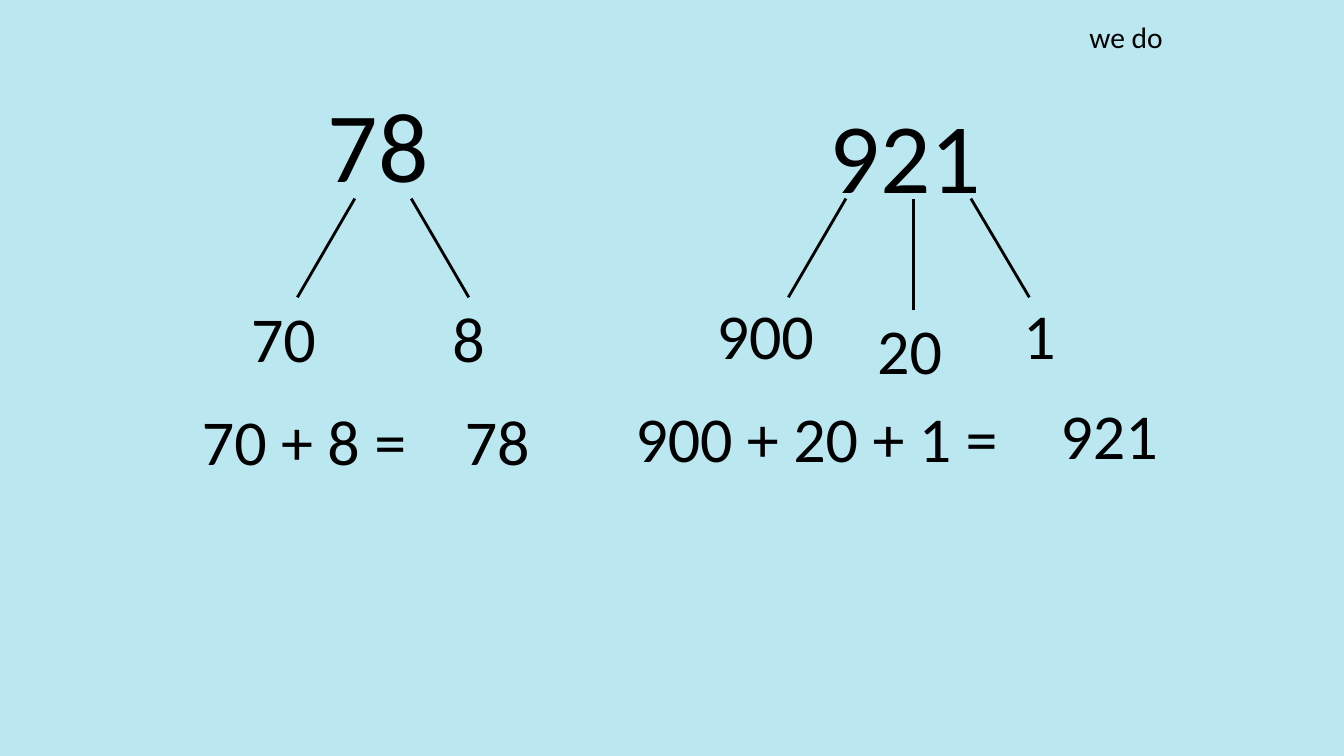
"""Build a slide that partitions 78 and 921 into place values."""
from dataclasses import dataclass

from lxml.etree import SubElement
from pptx import Presentation
from pptx.dml.color import RGBColor
from pptx.enum.shapes import MSO_CONNECTOR
from pptx.enum.text import MSO_ANCHOR, MSO_AUTO_SIZE, PP_ALIGN
from pptx.oxml.ns import qn
from pptx.util import Inches, Pt


@dataclass(frozen=True)
class Theme:
    """Colours, font and type sizes."""
    background: RGBColor = RGBColor(0xBA, 0xE7, 0xF0)
    ink: RGBColor = RGBColor(0, 0, 0)
    font: str = "Calibri"
    number: float = 71
    addend: float = 45.7
    label: float = 21.1
    line: float = 2
    inset: float = 0.04


THEME = Theme()
WIDTH, HEIGHT = 13.33, 7.5
EMS = {" ": 0.23, "w": 0.72, "e": 0.5, "d": 0.53, "o": 0.53, "+": 0.5, "=": 0.5}
DIGIT_EM, LINE_EM = 0.51, 1.22

LABEL = ("we do", 83.82, 4.87)
BRANCH_TOP = 26.27
MODELS = [
    {"number": ("78", 28.16, 18.87),
     "addends": [("70", 21.11, 44.6), ("8", 34.88, 44.6)],
     "branches": [(26.4, 22.13, 39.33), (30.6, 34.88, 39.33)],
     "sum": [("70 + 8 =", 22.69, 58.2), ("78", 37.02, 58.2)]},
    {"number": ("921", 67.4, 20.33),
     "addends": [("900", 56.97, 44.2), ("20", 67.7, 46.2), ("1", 77.34, 44.2)],
     "branches": [(62.94, 58.66, 39.33), (67.97, 67.97, 41.07), (72.24, 76.59, 39.33)],
     "sum": [("900 + 20 + 1 =", 60.87, 57.8), ("921", 82.55, 57.4)]},
]


def across(share):
    return Inches(WIDTH * share / 100)


def down(share):
    return Inches(HEIGHT * share / 100)


def write(sp, item, size):
    text, x, y = item
    ems = sum(EMS.get(char, DIGIT_EM) for char in text)
    sp.width = Inches(ems * size / 72 + 2 * THEME.inset)
    sp.height = Inches(LINE_EM * size / 72 + 2 * THEME.inset)
    sp.left = across(x) - sp.width // 2
    sp.top = down(y) - sp.height // 2
    tf = sp.text_frame
    tf.word_wrap = False
    tf.auto_size = MSO_AUTO_SIZE.SHAPE_TO_FIT_TEXT
    tf.vertical_anchor = MSO_ANCHOR.MIDDLE
    tf.margin_left = tf.margin_right = Inches(THEME.inset)
    tf.margin_top = tf.margin_bottom = Inches(THEME.inset)
    p = tf.paragraphs[0]
    p.alignment = PP_ALIGN.LEFT
    p.line_spacing = 1.0
    p.space_before = Pt(0)
    r = p.add_run()
    r.text = text
    r.font.size = Pt(size)
    r.font.name = THEME.font
    r.font.color.rgb = THEME.ink


def add_text(s, item, size):
    write(s.shapes.add_textbox(0, 0, 0, 0), item, size)


def add_branch(s, top_x, bottom_x, bottom_y):
    line = s.shapes.add_connector(MSO_CONNECTOR.STRAIGHT, across(bottom_x), down(bottom_y),
                                  across(top_x), down(BRANCH_TOP))
    line.line.color.rgb = THEME.ink
    line.line.width = Pt(THEME.line)
    SubElement(line._element.spPr, qn("a:effectLst"))


def main():
    prs = Presentation()
    prs.slide_width, prs.slide_height = Inches(WIDTH), Inches(HEIGHT)
    s = prs.slides.add_slide(prs.slide_layouts[5])
    s.background.fill.solid()
    s.background.fill.fore_color.rgb = THEME.background
    write(s.shapes.title, LABEL, THEME.label)
    for model in MODELS:
        add_text(s, model["number"], THEME.number)
        for branch in model["branches"]:
            add_branch(s, *branch)
        for item in model["addends"] + model["sum"]:
            add_text(s, item, THEME.addend)
    prs.save("out.pptx")


if __name__ == "__main__":
    main()
